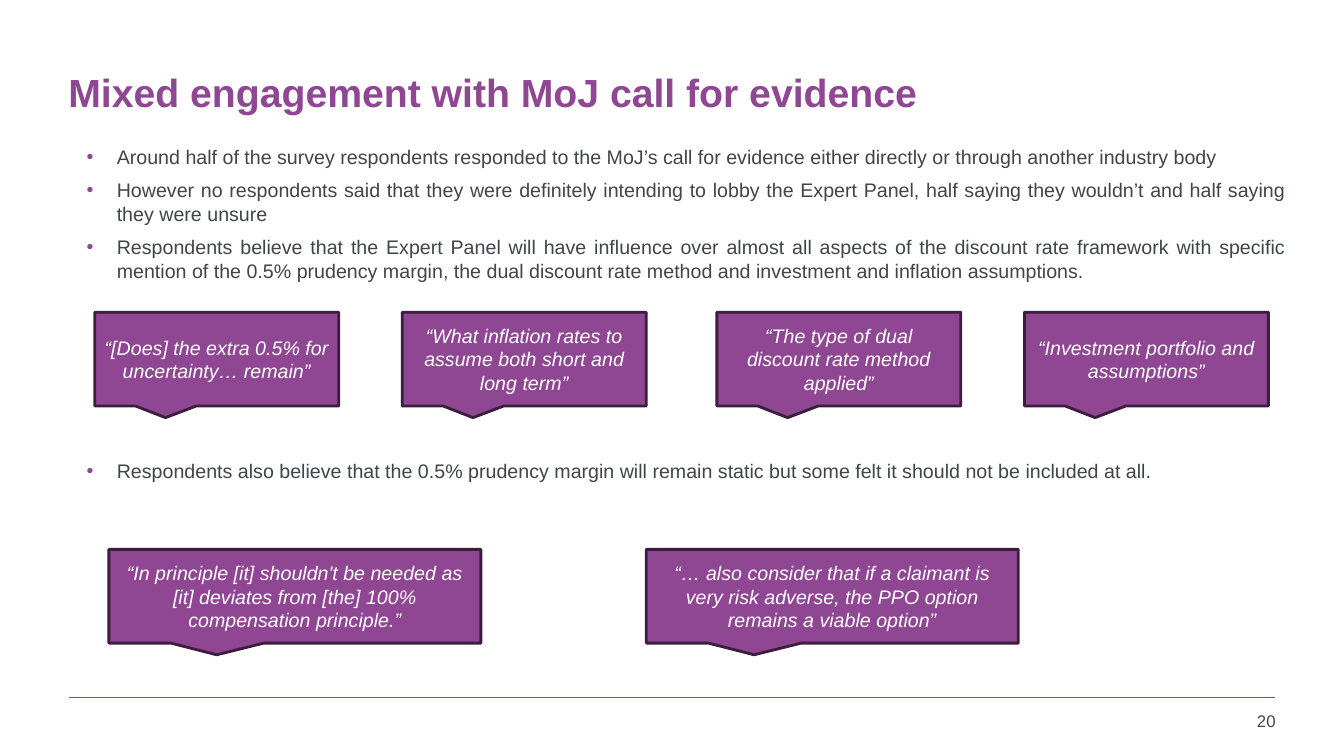
from lxml import etree
from pptx import Presentation
from pptx import util as u
from pptx.dml.color import RGBColor
from pptx.enum import shapes, text
from pptx.oxml.ns import qn

PURPLE = RGBColor(0x8F, 0x46, 0x93)
DARK_PURPLE = RGBColor(0x3C, 0x1D, 0x3E)
GREY = RGBColor(0x3F, 0x45, 0x48)
WHITE = RGBColor(0xFF, 0xFF, 0xFF)

# The slide is divided into 100 columns and 100 rows
WIDTH, HEIGHT = u.Inches(13.33), u.Inches(7.5)
CALLOUT_ROWS = 12.4

FINDINGS = [
    "Around half of the survey respondents responded to the MoJ’s call for evidence "
    "either directly or through another industry body",
    "However no respondents said that they were definitely intending to lobby the "
    "Expert Panel, half saying they wouldn’t and half saying they were unsure",
    "Respondents believe that the Expert Panel will have influence over almost all "
    "aspects of the discount rate framework with specific mention of the 0.5% prudency "
    "margin, the dual discount rate method and investment and inflation assumptions.",
]
MARGIN_FINDINGS = [
    "Respondents also believe that the 0.5% prudency margin will remain static but "
    "some felt it should not be included at all.",
]

# Quotes by their left column
INFLUENCE_QUOTES = {
    7.05: "“[Does] the extra 0.5% for uncertainty… remain”",
    29.93: "“What inflation rates to assume both short and long term”",
    53.34: "“The type of dual discount rate method applied”",
    76.22: "“Investment portfolio and assumptions”",
}
MARGIN_QUOTES = {
    8.1: "“In principle [it] shouldn't be needed as [it] deviates from [the] 100% "
         "compensation principle.”",
    48.09: "“… also consider that if a claimant is very risk adverse, the PPO option "
           "remains a viable option”",
}


def place(left, top, columns, rows):
    """Turn grid columns and rows into slide lengths."""
    return [u.Emu(round(share * side / 100)) for share, side in
            ((left, WIDTH), (top, HEIGHT), (columns, WIDTH), (rows, HEIGHT))]


def style(paragraph, size, color, alignment, bold=False, italic=False):
    paragraph.alignment = alignment
    font = paragraph.font
    font.name, font.size = "Arial", u.Pt(size)
    font.bold, font.italic = bold, italic
    font.color.rgb = color


def add_text(slide, area, lines, anchor=text.MSO_ANCHOR.TOP):
    frame = slide.shapes.add_textbox(*place(*area)).text_frame
    frame.word_wrap = True
    frame.vertical_anchor = anchor
    frame.text = "\n".join(lines)
    return frame.paragraphs


def add_bullet(paragraph):
    properties = paragraph._p.get_or_add_pPr()
    properties.set("marL", str(u.Inches(0.3)))
    properties.set("indent", str(-u.Inches(0.3)))
    bullet_color = etree.SubElement(properties, qn("a:buClr"))
    etree.SubElement(bullet_color, qn("a:srgbClr"), val=str(PURPLE))
    etree.SubElement(properties, qn("a:buFont"), typeface="Arial")
    etree.SubElement(properties, qn("a:buChar"), char="•")


def add_bullets(slide, area, lines):
    for index, paragraph in enumerate(add_text(slide, area, lines)):
        add_bullet(paragraph)
        style(paragraph, 14, GREY, text.PP_ALIGN.JUSTIFY)
        if index:
            paragraph.space_before = u.Pt(7)


def add_callouts(slide, top, columns, quotes):
    for left, quote in quotes.items():
        shape = slide.shapes.add_shape(shapes.MSO_SHAPE.RECTANGULAR_CALLOUT,
                                       *place(left, top, columns, CALLOUT_ROWS))
        shape.adjustments[0], shape.adjustments[1] = -0.21, 0.625
        shape.shadow.inherit = False
        shape.fill.solid()
        shape.fill.fore_color.rgb = PURPLE
        shape.line.color.rgb = DARK_PURPLE
        shape.line.width = u.Pt(2)
        frame = shape.text_frame
        frame.word_wrap = True
        frame.vertical_anchor = text.MSO_ANCHOR.MIDDLE
        frame.text = quote
        style(frame.paragraphs[0], 14, WHITE, text.PP_ALIGN.CENTER, italic=True)


def add_rule(slide, left, top, columns):
    x, y, width, _ = place(left, top, columns, 0)
    rule = slide.shapes.add_connector(shapes.MSO_CONNECTOR.STRAIGHT, x, y, x + width, y)
    rule.line.color.rgb = PURPLE
    rule.line.width = u.Pt(1)
    etree.SubElement(rule._element.spPr, qn("a:effectLst"))


def main():
    presentation = Presentation()
    presentation.slide_width, presentation.slide_height = WIDTH, HEIGHT
    slide = presentation.slides.add_slide(presentation.slide_layouts[6])

    # Title
    title = add_text(slide, (4.35, 3.87, 93.47, 16.67),
                     ["Mixed engagement with MoJ call for evidence"],
                     text.MSO_ANCHOR.MIDDLE)
    style(title[0], 28, PURPLE, text.PP_ALIGN.LEFT, bold=True)

    # Influence of the Expert Panel
    add_bullets(slide, (5.7, 18.53, 90.77, 20), FINDINGS)
    add_callouts(slide, 41.3, 18.15, INFLUENCE_QUOTES)

    # Prudency margin
    add_bullets(slide, (5.7, 60, 90.77, 5), MARGIN_FINDINGS)
    add_callouts(slide, 72.67, 27.68, MARGIN_QUOTES)

    # Footer
    add_rule(slide, 5.1, 92.27, 89.8)
    page_number = add_text(slide, (88.6, 93.33, 7.05, 4.93), ["20"])
    style(page_number[0], 12, GREY, text.PP_ALIGN.RIGHT)

    presentation.save("out.pptx")


if __name__ == "__main__":
    main()
